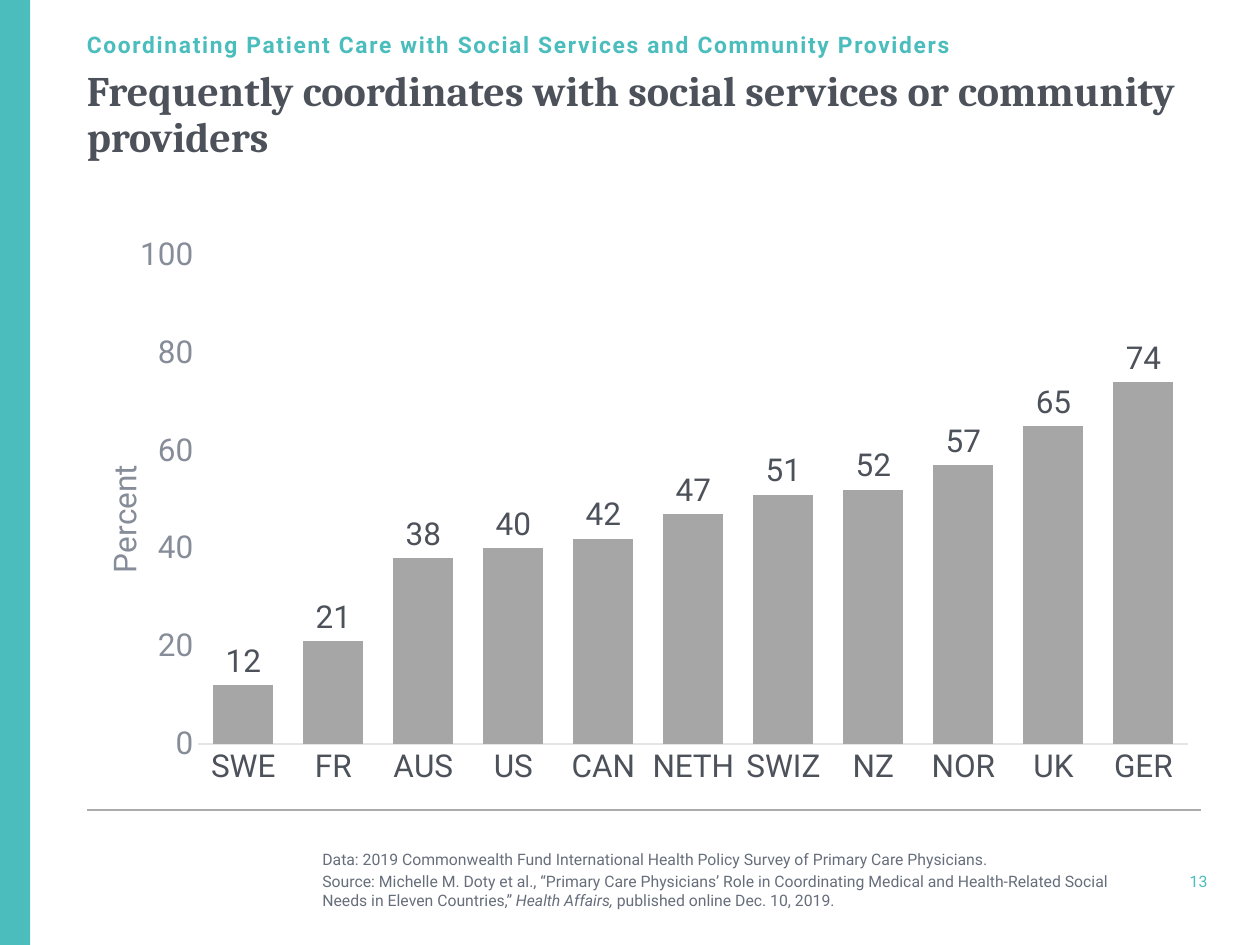
from dataclasses import dataclass

from lxml import etree
from pptx import Presentation
from pptx.chart.data import CategoryChartData
from pptx.dml.color import RGBColor
from pptx.enum.chart import XL_CHART_TYPE, XL_LABEL_POSITION, XL_TICK_MARK
from pptx.enum.shapes import MSO_CONNECTOR, MSO_SHAPE
from pptx.enum.text import MSO_ANCHOR, PP_ALIGN
from pptx.oxml.ns import qn
from pptx.util import Cm, Pt

COLUMNS = XL_CHART_TYPE.COLUMN_CLUSTERED
OUTSIDE_END = XL_LABEL_POSITION.OUTSIDE_END
NO_TICK = XL_TICK_MARK.NONE
STRAIGHT = MSO_CONNECTOR.STRAIGHT
RECT = MSO_SHAPE.RECTANGLE
LEFT, RIGHT = PP_ALIGN.LEFT, PP_ALIGN.RIGHT
TOP, MIDDLE, BOTTOM = MSO_ANCHOR.TOP, MSO_ANCHOR.MIDDLE, MSO_ANCHOR.BOTTOM

TEAL, DARK, GREY, NOTE = "4ABDBC", "4C515A", "868D99", "676E7B"
BAR, RULE, AXIS = "A6A6A6", "ABABAB", "E3E5E7"
SANS, SERIF = "Roboto", "Cambria"
MARGIN, CONTENT_WIDTH = 1.75, 22.48

PERCENT_BY_COUNTRY = {
    "SWE": 12, "FR": 21, "AUS": 38, "US": 40, "CAN": 42, "NETH": 47,
    "SWIZ": 51, "NZ": 52, "NOR": 57, "UK": 65, "GER": 74,
}


@dataclass
class TextBlock:
    """Box in centimetres; each paragraph is a list of (text, italic) runs."""
    box: tuple[float, float, float, float]
    paragraphs: list[list[tuple[str, bool]]]
    size: float
    color: str
    font: str = SANS
    bold: bool = False
    anchor: MSO_ANCHOR = MIDDLE
    align: PP_ALIGN = LEFT
    line_spacing: float = 1.0
    tracking: int = 0  # hundredths of a point
    wrap: bool = True


TEXTS = [
    TextBlock((23.55, 17.48, 0.79, 0.56), [[("13", False)]], 9, TEAL,
              align=RIGHT, wrap=False),
    TextBlock((6.5, 16.66, 16.61, 2.16), [
        [("Data: 2019 Commonwealth Fund International Health Policy Survey "
          "of Primary Care Physicians.", False)],
        [("Source: Michelle M. Doty et al., “Primary Care Physicians’ Role in "
          "Coordinating Medical and Health-Related Social Needs in Eleven "
          "Countries,” ", False),
         ("Health Affairs,", True),
         (" published online Dec. 10, 2019.", False)],
    ], 9, NOTE),
    TextBlock((MARGIN, 0.48, CONTENT_WIDTH, 0.69),
              [[("Coordinating Patient Care with Social Services and "
                 "Community Providers", False)]],
              13, TEAL, bold=True, anchor=BOTTOM, tracking=100),
    TextBlock((MARGIN, 1.42, CONTENT_WIDTH, 3.3),
              [[("Frequently coordinates with social services or community "
                 "providers", False)]],
              24, DARK, font=SERIF, bold=True, anchor=TOP, line_spacing=0.9),
]


def rgb(color: str) -> RGBColor:
    return RGBColor.from_string(color)


def style_font(font, size: float, color: str, name: str = SANS,
               bold: bool = False) -> None:
    font.size, font.name, font.bold = Pt(size), name, bold
    font.color.rgb = rgb(color)


def add_text(slide, block: TextBlock) -> None:
    tf = slide.shapes.add_textbox(*map(Cm, block.box)).text_frame
    tf.word_wrap = block.wrap
    tf.vertical_anchor = block.anchor
    tf.margin_left = tf.margin_right = tf.margin_top = tf.margin_bottom = 0
    for i, runs in enumerate(block.paragraphs):
        p = tf.add_paragraph() if i else tf.paragraphs[0]
        p.alignment = block.align
        p.line_spacing = block.line_spacing
        if i:
            p.space_before = Pt(0.2 * block.size)
        style_font(p.font, block.size, block.color, block.font, block.bold)
        for text, italic in runs:
            r = p.add_run()
            r.text = text
            if italic:
                r.font.italic = True
            if block.tracking:
                r.font.bold = block.bold  # gives the run its properties element
                r.element.find(qn("a:rPr")).set("spc", str(block.tracking)) \
                    if hasattr(r, "element") else \
                    r._r.get_or_add_rPr().set("spc", str(block.tracking))


def add_sidebar(slide, height: int) -> None:
    s = slide.shapes.add_shape(RECT, 0, 0, Cm(0.61), height)
    s.shadow.inherit = False
    s.fill.solid()
    s.fill.fore_color.rgb = rgb(TEAL)
    s.line.fill.background()


def add_rule(slide, y: float) -> None:
    line = slide.shapes.add_connector(
        STRAIGHT, Cm(24.21), Cm(y), Cm(MARGIN), Cm(y))
    line.line.color.rgb = rgb(RULE)
    line.line.width = Pt(0.75)
    etree.SubElement(line.element.spPr, qn("a:effectLst"))


def set_layout(parent, index: int, **values) -> None:
    """Give a chart part a manual layout, in fractions of the chart."""
    for old in parent.findall(qn("c:layout")):
        parent.remove(old)
    layout = etree.Element(qn("c:layout"))
    manual = etree.SubElement(layout, qn("c:manualLayout"))
    for tag, value in values.items():
        etree.SubElement(manual, qn(f"c:{tag}")).set("val", str(value))
    parent.insert(index, layout)


def add_percent_chart(slide) -> None:
    data = CategoryChartData(number_format="0")
    data.categories = list(PERCENT_BY_COUNTRY)
    data.add_series("Series 1", list(PERCENT_BY_COUNTRY.values()))
    chart = slide.shapes.add_chart(
        COLUMNS, Cm(MARGIN), Cm(4.72), Cm(CONTENT_WIDTH), Cm(11.35), data).chart
    chart.has_legend = chart.has_title = False
    style_font(chart.font, 18, DARK)
    set_layout(chart.element.find(".//" + qn("c:plotArea")), 0,
               layoutTarget="inner", xMode="edge", yMode="edge",
               x=0.1, y=0.037, w=0.888, h=0.869)

    plot = chart.plots[0]
    plot.vary_by_categories = False
    plot.gap_width, plot.overlap = 50, -27
    fill = plot.series[0].format.fill
    fill.solid()
    fill.fore_color.rgb = rgb(BAR)
    plot.has_data_labels = True
    labels = plot.data_labels
    labels.show_value = True
    labels.position = OUTSIDE_END
    labels.number_format, labels.number_format_is_linked = "0", False
    style_font(labels.font, 18, DARK)

    countries, percent = chart.category_axis, chart.value_axis
    for axis, color in ((countries, DARK), (percent, GREY)):
        axis.has_major_gridlines = False
        axis.major_tick_mark = axis.minor_tick_mark = NO_TICK
        style_font(axis.tick_labels.font, 18, color)
    countries.format.line.color.rgb = rgb(AXIS)
    countries.format.line.width = Pt(0.75)
    percent.format.line.fill.background()
    percent.minimum_scale, percent.maximum_scale = 0, 100
    percent.major_unit = 20
    percent.tick_labels.number_format = "#,##0"
    percent.tick_labels.number_format_is_linked = False

    title = percent.axis_title
    p = title.text_frame.paragraphs[0]
    p.text = "Percent"
    style_font(p.font, 18, GREY)
    title.element.find(".//" + qn("a:bodyPr")).set("rot", "-5400000")
    set_layout(title.element, 1, xMode="edge", yMode="edge", x=0.01, y=0.4)


def main() -> None:
    prs = Presentation()
    prs.slide_width, prs.slide_height = Cm(25.4), Cm(19.05)
    slide = prs.slides.add_slide(prs.slide_layouts[6])
    add_sidebar(slide, prs.slide_height)
    add_rule(slide, 16.33)
    add_percent_chart(slide)
    for block in TEXTS:
        add_text(slide, block)
    prs.save("out.pptx")


if __name__ == "__main__":
    main()
